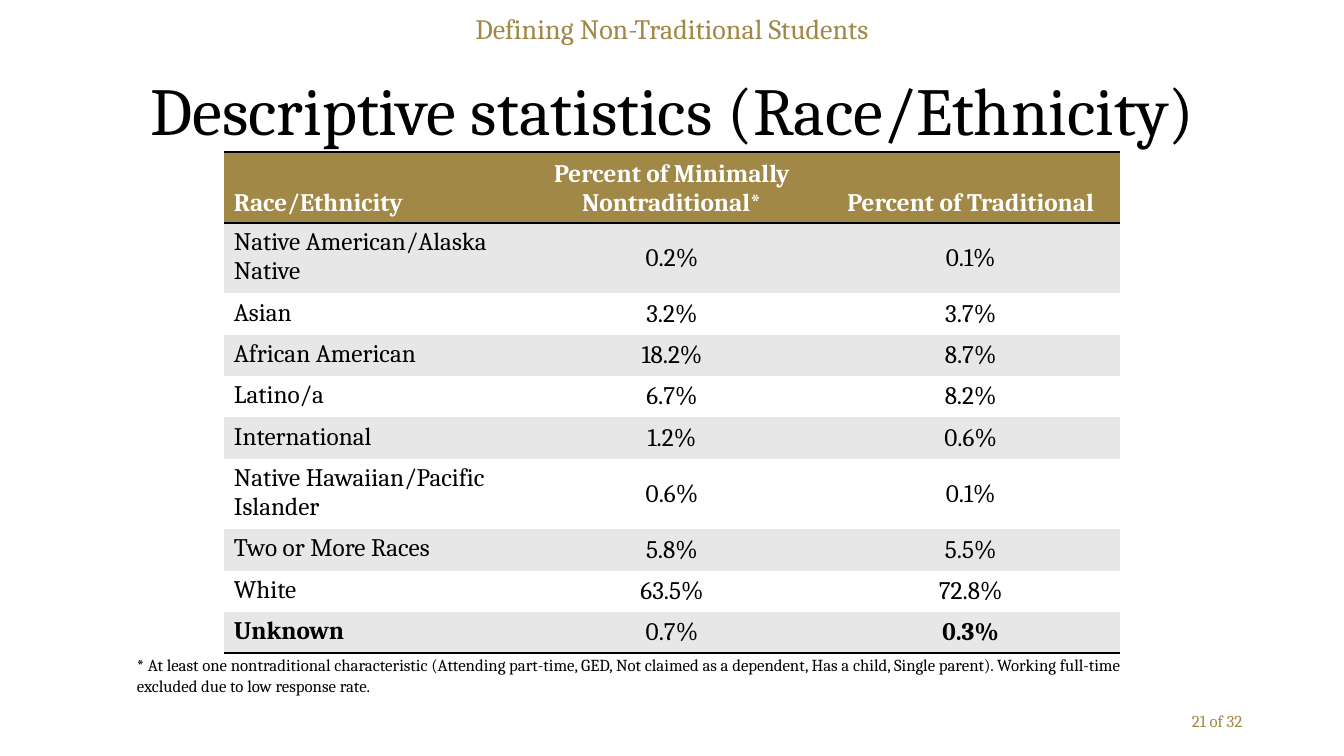
from lxml import etree
from pptx import Presentation
from pptx.dml.color import RGBColor
from pptx.enum.text import MSO_ANCHOR, PP_ALIGN
from pptx.oxml.ns import qn
from pptx.util import Inches, Pt

LEFT, CENTER, RIGHT = PP_ALIGN.LEFT, PP_ALIGN.CENTER, PP_ALIGN.RIGHT
TOP, MIDDLE, BOTTOM = MSO_ANCHOR.TOP, MSO_ANCHOR.MIDDLE, MSO_ANCHOR.BOTTOM
FONT = "Cambria"
COLORS = {"gold": "A18846", "black": "000000", "white": "FFFFFF", "band": "E7E7E7"}
ROW_HEIGHT = 0.41
BORDER_WIDTH = 2

HEADINGS = ("Race/Ethnicity", "Percent of Minimally Nontraditional*", "Percent of Traditional")
SHARES = (
    ("Native American/Alaska Native", "0.2%", "0.1%"),
    ("Asian", "3.2%", "3.7%"),
    ("African American", "18.2%", "8.7%"),
    ("Latino/a", "6.7%", "8.2%"),
    ("International", "1.2%", "0.6%"),
    ("Native Hawaiian/Pacific Islander", "0.6%", "0.1%"),
    ("Two or More Races", "5.8%", "5.5%"),
    ("White", "63.5%", "72.8%"),
    ("Unknown", "0.7%", "0.3%"),
)


def write(para, text, size, color, align=LEFT, bold=False):
    para.alignment = align
    span = para.add_run()
    span.text = text
    span.font.name = FONT
    span.font.size = Pt(size)
    span.font.bold = bold
    span.font.color.rgb = RGBColor.from_string(COLORS[color])


def add_text(page, box, text, size, color, align=LEFT, anchor=TOP, spacing=1.0):
    frame = page.shapes.add_textbox(*(Inches(length) for length in box)).text_frame
    frame.word_wrap = True
    frame.vertical_anchor = anchor
    para = frame.paragraphs[0]
    para.line_spacing = spacing
    write(para, text, size, color, align)


def set_borders(cell, ruled_edges):
    properties = cell._tc.get_or_add_tcPr()
    for edge in ("lnL", "lnR", "lnT", "lnB"):
        line = etree.SubElement(properties, qn(f"a:{edge}"))
        if edge in ruled_edges:
            line.set("w", str(Pt(BORDER_WIDTH)))
            fill = etree.SubElement(line, qn("a:solidFill"))
            etree.SubElement(fill, qn("a:srgbClr"), val=COLORS["black"])
        else:
            line.set("w", "0")
            etree.SubElement(line, qn("a:noFill"))


def add_share_table(page, box):
    rows = (HEADINGS,) + SHARES
    last_row, last_column = len(rows) - 1, len(HEADINGS) - 1
    left, top, width, height = (Inches(length) for length in box)
    table = page.shapes.add_table(len(rows), len(HEADINGS), left, top, width, height).table
    table.horz_banding = False
    for column in table.columns:
        column.width = width // len(HEADINGS)
    for r, texts in enumerate(rows):
        table.rows[r].height = Inches(ROW_HEIGHT)
        header = r == 0
        ruled_edges = [edge for edge, ruled in (("lnT", (0, 1)), ("lnB", (0, last_row))) if r in ruled]
        fill = "gold" if header else "band" if r % 2 else "white"
        for c, text in enumerate(texts):
            cell = table.cell(r, c)
            set_borders(cell, ruled_edges)
            cell.fill.solid()
            cell.fill.fore_color.rgb = RGBColor.from_string(COLORS[fill])
            cell.vertical_anchor = BOTTOM if header else MIDDLE if c else TOP
            write(
                cell.text_frame.paragraphs[0], text, 18,
                "white" if header else "black",
                CENTER if c else LEFT,
                header or (r == last_row and c in (0, last_column)),
            )


def add_statistics_slide(deck):
    page = deck.slides.add_slide(deck.slide_layouts[6])
    add_text(page, (0.92, 0.4, 11.5, 1.45), "Descriptive statistics (Race/Ethnicity)",
             48, "black", CENTER, MIDDLE, 0.9)
    add_text(page, (9.42, 6.95, 3, 0.4), "21 of 32", 12, "gold", RIGHT, MIDDLE)
    add_text(page, (0, 0.13, 13.33, 0.4), "Defining Non-Traditional Students",
             20, "gold", CENTER, TOP, 0.8)
    add_text(page, (1.26, 6.45, 10.49, 0.5),
             "* At least one nontraditional characteristic (Attending part-time, GED, "
             "Not claimed as a dependent, Has a child, Single parent). "
             "Working full-time excluded due to low response rate.", 12, "black")
    add_share_table(page, (2.22, 1.51, 8.89, 4.94))


def main():
    deck = Presentation()
    deck.slide_width = Inches(13.33)
    deck.slide_height = Inches(7.5)
    add_statistics_slide(deck)
    deck.save("out.pptx")


if __name__ == "__main__":
    main()
